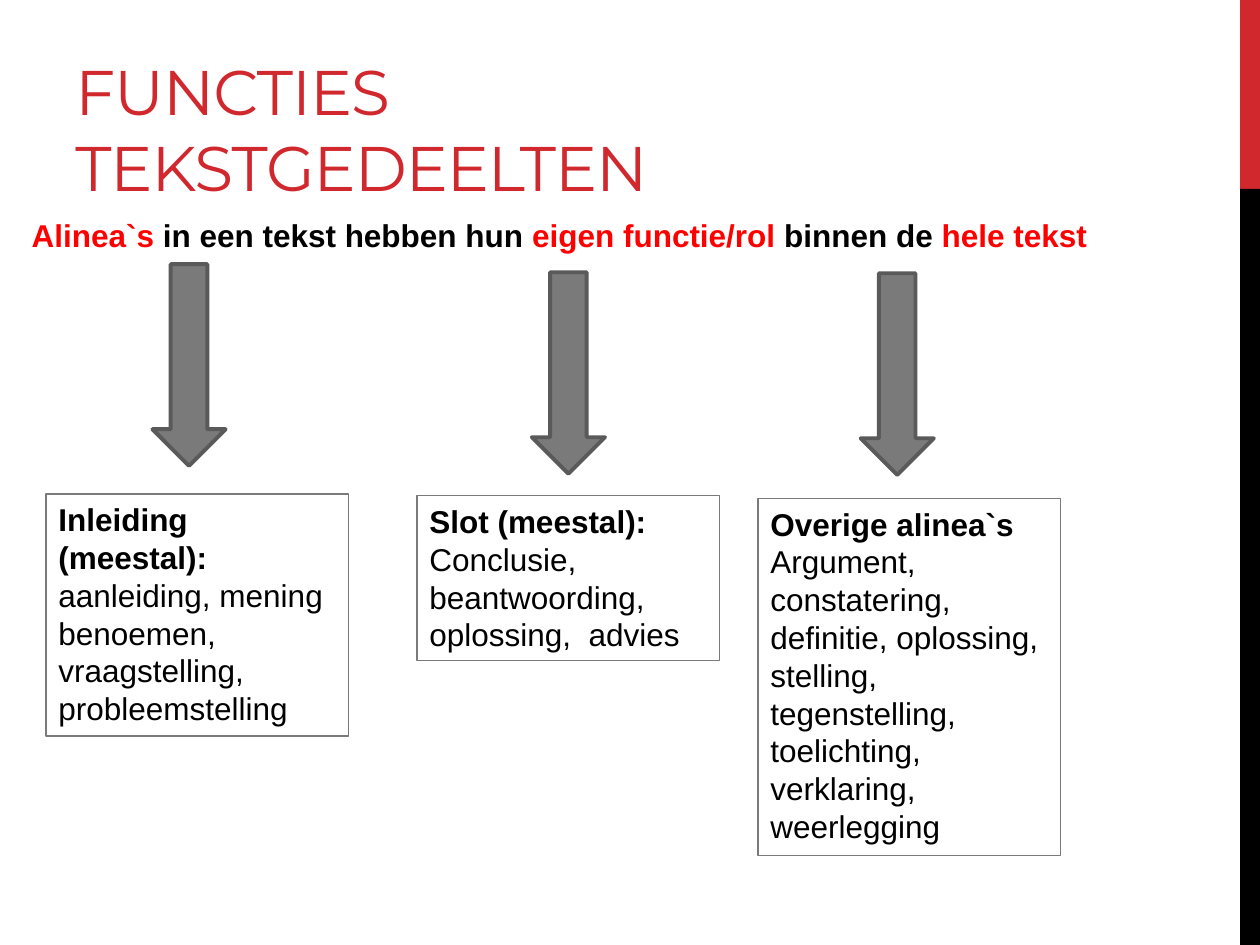
from dataclasses import dataclass

from lxml.etree import SubElement
from pptx import Presentation
from pptx.dml.color import RGBColor
from pptx.enum.shapes import MSO_SHAPE
from pptx.enum.text import MSO_ANCHOR, MSO_AUTO_SIZE, PP_ALIGN
from pptx.oxml.ns import qn
from pptx.util import Pt

RED, BLACK, BRIGHT_RED = "D1282E", "000000", "FF0000"
GREY, DARK_GREY = "7A7A7A", "5A5A5A"
BODY = {"name": "Arial", "size": Pt(18)}
BOX_W, ARROW_W, ARROW_H = 172.8, 41.8, 115.2


@dataclass
class Run:
    text: str
    bold: bool = True
    color: str = BLACK


@dataclass
class Branch:
    arrow: tuple[float, float]
    box: tuple[float, float]
    box_h: float
    paragraphs: list[list[Run]]


def rgb(color: str) -> RGBColor:
    return RGBColor.from_string(color)


def add_run(p, text: str, color: str, **fmt):
    r = p.add_run()
    r.text = text
    r.font.color.rgb = rgb(color)
    for name, value in fmt.items():
        setattr(r.font, name, value)
    return r


def add_shape(s, kind, x: float, y: float, w: float, h: float,
              fill: str | None = None, line: str | None = None,
              weight: float = 0.75):
    sp = s.shapes.add_shape(kind, Pt(x), Pt(y), Pt(w), Pt(h))
    sp.shadow.inherit = False
    if fill:
        sp.fill.solid()
        sp.fill.fore_color.rgb = rgb(fill)
    else:
        sp.fill.background()
    if line:
        sp.line.color.rgb = rgb(line)
        sp.line.width = Pt(weight)
    else:
        sp.line.fill.background()
    return sp


def add_text(s, x: float, y: float, w: float, h: float, anchor=MSO_ANCHOR.TOP):
    tf = s.shapes.add_textbox(Pt(x), Pt(y), Pt(w), Pt(h)).text_frame
    tf.word_wrap = True
    tf.vertical_anchor = anchor
    return tf


def add_branch(s, branch: Branch) -> None:
    arrow = add_shape(s, MSO_SHAPE.DOWN_ARROW, *branch.arrow, ARROW_W, ARROW_H,
                      GREY, DARK_GREY, 2.25)
    SubElement(arrow.line._get_or_add_ln(), qn("a:round"))
    box = add_shape(s, MSO_SHAPE.RECTANGLE, *branch.box, BOX_W, branch.box_h,
                    line=GREY)
    tf = box.text_frame
    tf.word_wrap = True
    tf.auto_size = MSO_AUTO_SIZE.SHAPE_TO_FIT_TEXT
    tf.vertical_anchor = MSO_ANCHOR.TOP
    for i, runs in enumerate(branch.paragraphs):
        p = tf.add_paragraph() if i else tf.paragraphs[0]
        p.alignment = PP_ALIGN.LEFT
        for run in runs:
            add_run(p, run.text, run.color, bold=run.bold, **BODY)


STATEMENT = [
    Run("Alinea`s", color=BRIGHT_RED),
    Run(" in een tekst hebben hun "),
    Run("eigen functie/rol ", color=BRIGHT_RED),
    Run("binnen de "),
    Run("hele tekst", color=BRIGHT_RED),
]

BRANCHES = [
    Branch((87.1, 151), (26.3, 282.3), 138.3, [
        [Run("Inleiding (meestal): "),
         Run("aanleiding, mening benoemen, vraagstelling, probleemstelling", False)],
    ]),
    Branch((303.9, 155.6), (238.3, 283.3), 94.4, [
        [Run("Slot (meestal):")],
        [Run("Conclusie, beantwoording, oplossing,  advies", False)],
    ]),
    Branch((491.8, 156.2), (433.2, 284.8), 203.9, [
        [Run("Overige alinea`s")],
        [Run("Argument, constatering, definitie, oplossing, stelling, "
             "tegenstelling, toelichting, verklaring, weerlegging", False)],
    ]),
]


def main() -> None:
    prs = Presentation()
    prs.slide_width, prs.slide_height = Pt(720), Pt(540)
    s = prs.slides.add_slide(prs.slide_layouts[6])

    # Side band
    for y, h, color in ((0, 108, RED), (108, 432, BLACK)):
        add_shape(s, MSO_SHAPE.RECTANGLE, 708.6, y, 11.4, h, color)

    # Title
    tf = add_text(s, 36, 12, 456, 108, MSO_ANCHOR.BOTTOM)
    r = add_run(tf.paragraphs[0], "FUNCTIES TEKSTGEDEELTEN", RED,
                name="Montserrat", size=Pt(36))
    r.font._element.set("spc", "-60")

    # Statement
    p = add_text(s, 11, 119.7, 667.4, 404).paragraphs[0]
    p.space_before, p.space_after = Pt(3.6), Pt(6)
    for run in STATEMENT:
        add_run(p, run.text, run.color, bold=run.bold, **BODY)

    # Arrows with their explanation boxes
    for branch in BRANCHES:
        add_branch(s, branch)

    prs.save("out.pptx")


if __name__ == "__main__":
    main()
